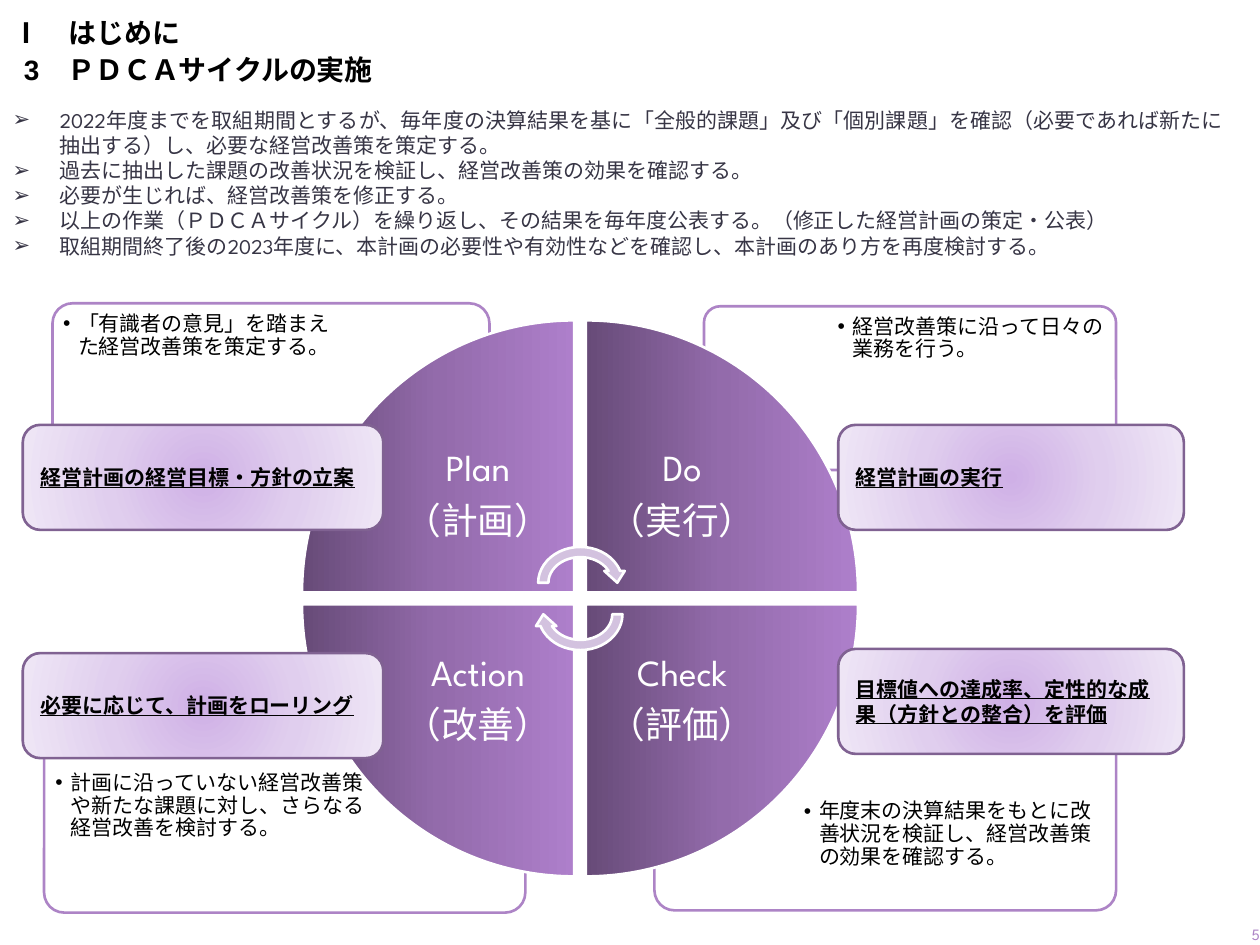
from lxml import etree
from pptx import Presentation
from pptx.dml.color import RGBColor
from pptx.enum.shapes import MSO_SHAPE as Shape
from pptx.enum.text import MSO_ANCHOR as Anchor, MSO_AUTO_SIZE as AutoSize, PP_ALIGN as Align
from pptx.oxml import parse_xml
from pptx.oxml.ns import nsdecls, qn
from pptx.util import Pt

# Content
HEADING = "Ⅰ　はじめに"
SUBHEADING = "3　ＰＤＣＡサイクルの実施"
POLICIES = [
    "2022年度までを取組期間とするが、毎年度の決算結果を基に「全般的課題」及び「個別課題」を確認"
    "（必要であれば新たに抽出する）し、必要な経営改善策を策定する。",
    "過去に抽出した課題の改善状況を検証し、経営改善策の効果を確認する。",
    "必要が生じれば、経営改善策を修正する。",
    "以上の作業（ＰＤＣＡサイクル）を繰り返し、その結果を毎年度公表する。（修正した経営計画の策定・公表）",
    "取組期間終了後の2023年度に、本計画の必要性や有効性などを確認し、本計画のあり方を再度検討する。",
]
PAGE_NUMBER = "5"

# Clockwise from top left; boxes are left, top, width, height
PHASES = [
    dict(label=["Plan", "（計画）"], column=0, row=0,
         goal="経営計画の経営目標・方針の立案", goal_box=(13, 242.8, 206, 60),
         detail="「有識者の意見」を踏まえた経営改善策を策定する。",
         detail_box=(32.4, 175.7, 170, 81.4), panel=(30, 173.3, 249.7, 115)),
    dict(label=["Do", "（実行）"], column=1, row=0,
         goal="経営計画の実行", goal_box=(479, 242.8, 197.5, 60),
         detail="経営改善策に沿って日々の業務を行う。",
         detail_box=(475, 177.1, 160.6, 65.5), panel=(402.3, 175, 235.5, 93.6)),
    dict(label=["Check", "（評価）"], column=1, row=1,
         goal="目標値への達成率、定性的な成果（方針との整合）を評価", goal_box=(479, 370.8, 197.5, 60),
         detail="年度末の決算結果をもとに改善状況を検証し、経営改善策の効果を確認する。",
         detail_box=(455.8, 436.3, 179.3, 81.4), panel=(374, 405.2, 263.8, 115),
         detail_anchor=Anchor.MIDDLE),
    dict(label=["Action", "（改善）"], column=0, row=1,
         goal="必要に応じて、計画をローリング", goal_box=(13, 373.2, 206, 60),
         detail="計画に沿っていない経営改善策や新たな課題に対し、さらなる経営改善を検討する。",
         detail_box=(28.1, 437.8, 187.2, 81.4), panel=(25.2, 406.5, 275, 115)),
]

# Style and cycle geometry
BODY_FONT, HEAD_FONT = "League Spartan", "Arial"
BLACK, WHITE, INK, LILAC = "000000", "FFFFFF", "373545", "AD84C6"
WEDGE_COLORS = ["674B78", "936BAB", "AE7FCB"]
GOAL_COLORS = ["CFB0E6", "E0CEEE", "EFE7F6"]
LINEAR = '<a:lin ang="0" scaled="0"/>'
RADIAL = '<a:path path="circle"><a:fillToRect l="50000" t="50000" r="50000" b="50000"/></a:path>'
CYCLE_LEFT, CYCLE_TOP, WEDGE, GAP, LABEL = 172.6, 183.1, 155.5, 6.7, 110

prs = Presentation()
prs.slide_width, prs.slide_height = Pt(720), Pt(540)
slide = prs.slides.add_slide(prs.slide_layouts[3])
heading, subheading, policies = slide.placeholders


def color(hex_code):
    return RGBColor.from_string(hex_code)


def place(holder, box):
    holder.left, holder.top, holder.width, holder.height = map(Pt, box)
    return holder


def write(holder, lines, size=12, font=BODY_FONT, ink=BLACK, bold=False, underline=None,
          align=Align.LEFT, anchor=Anchor.TOP, inset=None, spacing=None, after=0,
          bullet=None, indent=0):
    frame = holder.text_frame
    frame.word_wrap, frame.auto_size, frame.vertical_anchor = True, AutoSize.NONE, anchor
    if inset is not None:
        frame.margin_left = frame.margin_right = frame.margin_top = frame.margin_bottom = Pt(inset)
    for number, line in enumerate(lines):
        paragraph = frame.add_paragraph() if number else frame.paragraphs[0]
        paragraph.alignment, paragraph.line_spacing = align, spacing
        paragraph.space_before, paragraph.space_after = Pt(0), Pt(after)
        props = paragraph._p.get_or_add_pPr()
        props.set("marL", str(Pt(indent)))
        props.set("indent", str(-Pt(indent)))
        if bullet:
            etree.SubElement(props, qn("a:buFont")).set("typeface", "Arial")
            etree.SubElement(props, qn("a:buChar")).set("char", bullet)
        else:
            etree.SubElement(props, qn("a:buNone"))
        run = paragraph.add_run()
        run.text = line
        run.font.size, run.font.name = Pt(size), font
        run.font.bold, run.font.underline = bold, underline
        run.font.color.rgb = color(ink)
        latin = run._r.rPr.find(qn("a:latin"))
        east_asian = latin.makeelement(qn("a:ea"), {"typeface": BODY_FONT})
        latin.addnext(east_asian)


def add_text(box, lines, **style):
    write(slide.shapes.add_textbox(*map(Pt, box)), lines, **style)


def add_figure(kind, box, fill, line, rotation=0):
    figure = slide.shapes.add_shape(kind, *map(Pt, box))
    figure.shadow.inherit = False
    figure.rotation = rotation
    figure.fill.solid()
    figure.fill.fore_color.rgb = color(fill)
    figure.line.color.rgb = color(line)
    figure.line.width = Pt(1.5)
    return figure


def shade(figure, colors, direction):
    stops = "".join(f'<a:gs pos="{i * 50000}"><a:srgbClr val="{c}"/></a:gs>'
                    for i, c in enumerate(colors))
    gradient = parse_xml(f'<a:gradFill {nsdecls("a")} rotWithShape="0">'
                         f'<a:gsLst>{stops}</a:gsLst>{direction}</a:gradFill>')
    solid = figure._element.spPr.find(qn("a:solidFill"))
    solid.getparent().replace(solid, gradient)


# Headings and policy list
head_style = dict(size=16, font=HEAD_FONT, bold=True, anchor=Anchor.MIDDLE)
write(place(heading, (0, 5, 620, 27)), [HEADING], **head_style)
write(place(subheading, (6.5, 26.6, 620, 26)), [SUBHEADING], **head_style)
write(place(policies, (0, 57.6, 707, 94.3)), POLICIES, ink=INK, align=Align.JUSTIFY,
      bullet="➢", indent=27)

# Outlined panels with details
for phase in PHASES:
    panel = add_figure(Shape.ROUNDED_RECTANGLE, phase["panel"], WHITE, LILAC)
    panel.adjustments[0] = 0.1
    panel_color = panel._element.spPr.find(qn("a:solidFill"))[0]
    etree.SubElement(panel_color, qn("a:alpha")).set("val", "90000")
    add_text(phase["detail_box"], [phase["detail"]], inset=3.6, spacing=0.9, after=1.8,
             bullet="•", indent=8.6, anchor=phase.get("detail_anchor", Anchor.TOP))

# Cycle wedges, with labels in the corner nearest the centre
for turn, phase in enumerate(PHASES):
    left = CYCLE_LEFT + phase["column"] * (WEDGE + GAP)
    top = CYCLE_TOP + phase["row"] * (WEDGE + GAP)
    wedge = add_figure(Shape.PIE_WEDGE, (left, top, WEDGE, WEDGE), WEDGE_COLORS[0], WHITE, turn * 90)
    shade(wedge, WEDGE_COLORS, LINEAR)
    label_left = left + (1 - phase["column"]) * (WEDGE - LABEL)
    label_top = top + (1 - phase["row"]) * (WEDGE - LABEL)
    add_text((label_left, label_top, LABEL, LABEL), phase["label"], size=21, ink=WHITE,
             align=Align.CENTER, anchor=Anchor.MIDDLE, inset=11.5, spacing=0.9, after=7.35)

# Rotation arrows
for arrow_top, rotation in [(309.6, 0), (327.6, 180)]:
    add_figure(Shape.CIRCULAR_ARROW, (304.6, arrow_top, 54, 46.8), "D3C2DF", WHITE, rotation)

# Goal buttons
for phase in PHASES:
    goal = add_figure(Shape.ROUNDED_RECTANGLE, phase["goal_box"], GOAL_COLORS[0], "806292")
    shade(goal, GOAL_COLORS, RADIAL)
    write(goal, [phase["goal"]], font=HEAD_FONT, bold=True, underline=True, anchor=Anchor.MIDDLE)

# Page number
add_text((680, 528, 40, 12), [PAGE_NUMBER], size=9, ink=LILAC, align=Align.RIGHT,
         anchor=Anchor.MIDDLE, inset=0)

prs.save("out.pptx")
